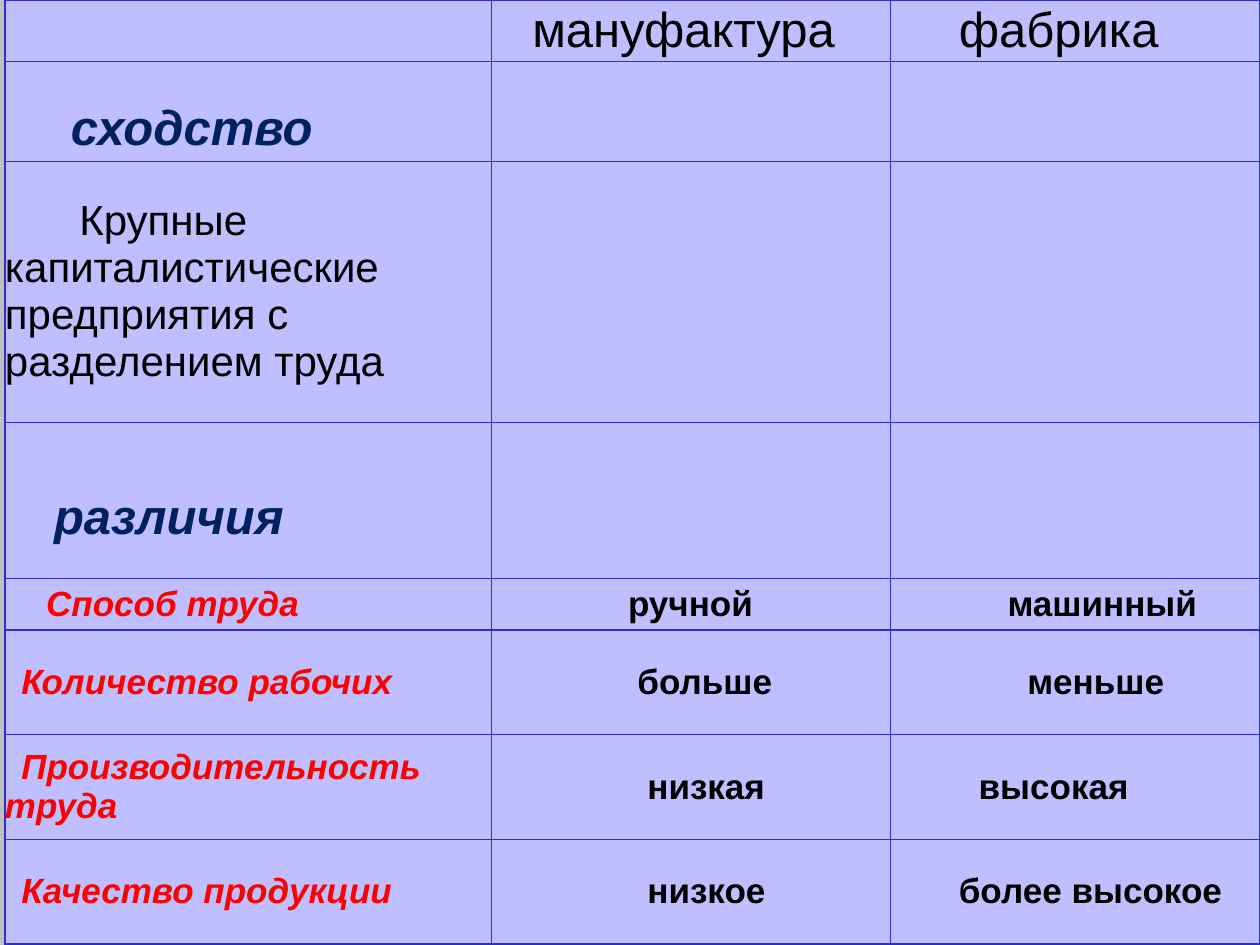
from lxml import etree
from pptx import Presentation
from pptx.dml.color import RGBColor
from pptx.enum.text import MSO_ANCHOR
from pptx.oxml.ns import qn
from pptx.util import Cm, Pt

MIDDLE = MSO_ANCHOR.MIDDLE
COLORS = {
    "background": "C0C0C0",
    "cell": "BFBFFF",
    "border": "2E2ECB",
    "text": "000000",
    "section": "002060",
    "criterion": "FF0000",
}
STYLES = {
    "heading": (28, "text", False, False),
    "section": (28, "section", True, True),
    "common": (24, "text", False, False),
    "criterion": (20, "criterion", True, True),
    "value": (20, "text", True, False),
}
SECTION_TOP = 0.69
BORDER_WIDTH = Pt(0.75)
COLUMN_WIDTHS = [9.81, 8.05, 7.44]
ROW_HEIGHTS = [1.24, 2.01, 5.26, 3.15, 1.04, 2.11, 2.11, 2.11]
COMPARISON = [
    [None, ("мануфактура", "heading", 0.82), ("фабрика", "heading", 1.37)],
    [("сходство", "section", 1.33), None, None],
    [("Крупные капиталистические предприятия с разделением труда", "common", 1.5),
     None, None],
    [("различия", "section", 0.99), None, None],
    [("Способ труда", "criterion", 0.83), ("ручной", "value", 2.75),
     ("машинный", "value", 2.35)],
    [("Количество рабочих", "criterion", 0.33), ("больше", "value", 2.94),
     ("меньше", "value", 2.75)],
    [("Производительность труда", "criterion", 0.33), ("низкая", "value", 3.14),
     ("высокая", "value", 1.77)],
    [("Качество продукции", "criterion", 0.33), ("низкое", "value", 3.14),
     ("более высокое", "value", 1.37)],
]


def rgb(name):
    """Return the named palette colour."""
    return RGBColor.from_string(COLORS[name])


def format_cell(cell):
    """Give a cell its borders, fill, zero margins and middle anchor."""
    properties = cell._tc.get_or_add_tcPr()
    for side in ("lnL", "lnR", "lnT", "lnB"):
        border = etree.SubElement(properties, qn(f"a:{side}"), w=str(BORDER_WIDTH))
        fill = etree.SubElement(border, qn("a:solidFill"))
        etree.SubElement(fill, qn("a:srgbClr"), val=COLORS["border"])
    cell.fill.solid()
    cell.fill.fore_color.rgb = rgb("cell")
    cell.margin_left = cell.margin_right = cell.margin_top = cell.margin_bottom = 0
    cell.vertical_anchor = MIDDLE


def write_cell(cell, wording, style, indent):
    """Write one entry with its style and first-line indent."""
    size, color, bold, italic = STYLES[style]
    if style == "section":
        cell.margin_top = Cm(SECTION_TOP)
    paragraph = cell.text_frame.paragraphs[0]
    paragraph_properties = paragraph._p.get_or_add_pPr()
    paragraph_properties.set("marL", "0")
    paragraph_properties.set("indent", str(Cm(indent)))
    run = paragraph.add_run()
    run.text = wording
    run.font.name = "Arial"
    run.font.size = Pt(size)
    run.font.bold = bold
    run.font.italic = italic
    run.font.color.rgb = rgb(color)


def add_comparison(slide, left, top, width, height):
    """Place the comparison of manufactory and factory in the given box."""
    table = slide.shapes.add_table(
        len(ROW_HEIGHTS), len(COLUMN_WIDTHS), left, top, width, height
    ).table
    table.first_row = False
    table.horz_banding = False
    for column, column_width in zip(table.columns, COLUMN_WIDTHS):
        column.width = Cm(column_width)
    for row, row_height, entries in zip(table.rows, ROW_HEIGHTS, COMPARISON):
        row.height = Cm(row_height)
        for cell, entry in zip(row.cells, entries):
            format_cell(cell)
            if entry:
                write_cell(cell, *entry)


def main():
    """Build and save the slide."""
    presentation = Presentation()
    presentation.slide_width = Cm(25.4)
    presentation.slide_height = Cm(19.05)
    slide = presentation.slides.add_slide(presentation.slide_layouts[6])
    slide.background.fill.solid()
    slide.background.fill.fore_color.rgb = rgb("background")
    add_comparison(slide, Cm(0.1), Cm(0), Cm(sum(COLUMN_WIDTHS)), Cm(sum(ROW_HEIGHTS)))
    presentation.save("out.pptx")


if __name__ == "__main__":
    main()
